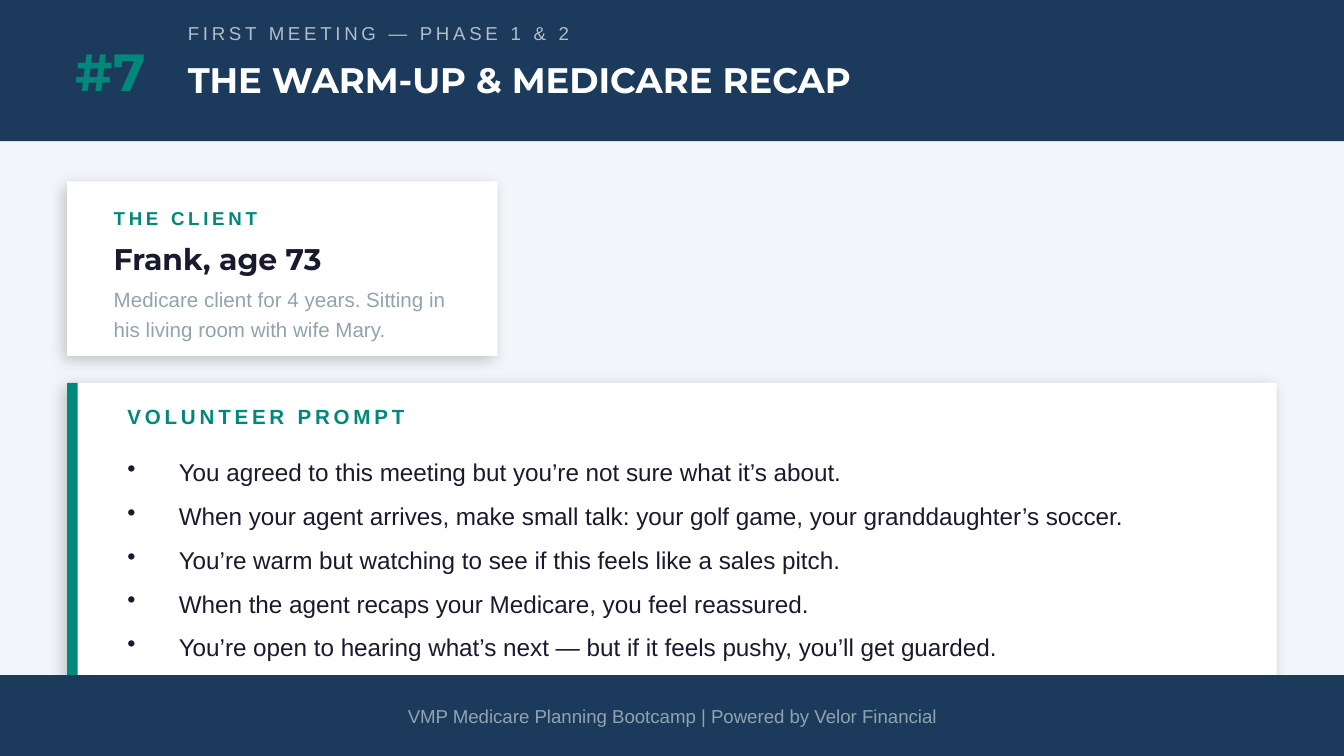
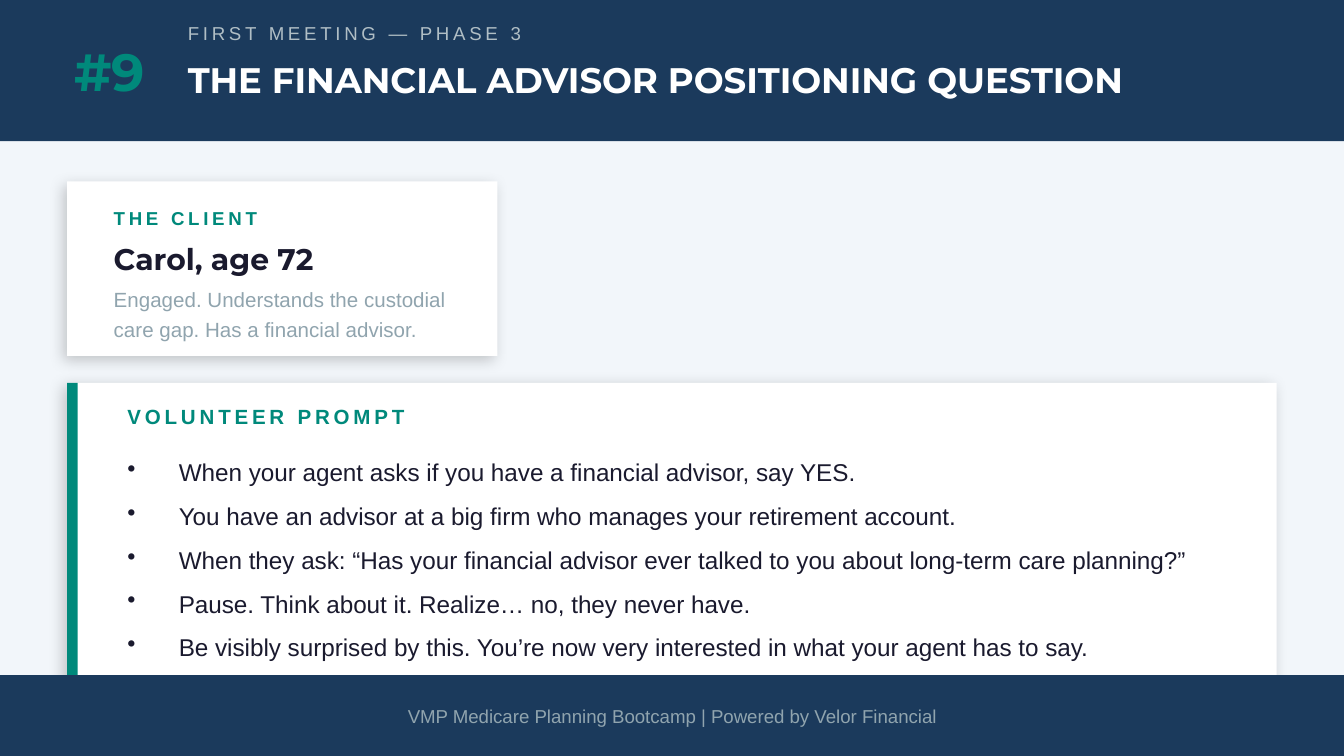
"""Builds two role-play slides for a Medicare planning bootcamp."""
import pptx
import pptx.dml.color
import pptx.enum.shapes
import pptx.enum.text
import pptx.oxml.ns
import pptx.util
from lxml import etree
from pptx.util import Cm

COLORS = {
    "page": "F2F6FA",
    "navy": "1B3A5C",
    "teal": "00897B",
    "white": "FFFFFF",
    "ink": "1A1A2E",
    "pale": "B0BEC5",
    "muted": "90A4AE",
}
HEADING_FONT, BODY_FONT = "Montserrat", "Arial"
WIDTH, HEIGHT = 25.4, 14.29
MARGIN = 1.27
CONTENT_WIDTH = WIDTH - 2 * MARGIN
MIDDLE = pptx.enum.text.MSO_ANCHOR.MIDDLE
TOP = pptx.enum.text.MSO_ANCHOR.TOP
CENTER = pptx.enum.text.PP_ALIGN.CENTER
LEFT = pptx.enum.text.PP_ALIGN.LEFT
FOOTER = "VMP Medicare Planning Bootcamp | Powered by Velor Financial"

SCENARIOS = [
    {
        "number": "#7",
        "number_left": 1.14,
        "phase": "FIRST MEETING — PHASE 1 & 2",
        "title": "THE WARM-UP & MEDICARE RECAP",
        "client": "Frank, age 73",
        "background": "Medicare client for 4 years. Sitting in his living room with wife Mary.",
        "prompts": [
            "You agreed to this meeting but you’re not sure what it’s about.",
            "When your agent arrives, make small talk: your golf game, your granddaughter’s soccer.",
            "You’re warm but watching to see if this feels like a sales pitch.",
            "When the agent recaps your Medicare, you feel reassured.",
            "You’re open to hearing what’s next — but if it feels pushy, you’ll get guarded.",
        ],
    },
    {
        "number": "#9",
        "number_left": 1.09,
        "phase": "FIRST MEETING — PHASE 3",
        "title": "THE FINANCIAL ADVISOR POSITIONING QUESTION",
        "client": "Carol, age 72",
        "background": "Engaged. Understands the custodial care gap. Has a financial advisor.",
        "prompts": [
            "When your agent asks if you have a financial advisor, say YES.",
            "You have an advisor at a big firm who manages your retirement account.",
            "When they ask: “Has your financial advisor ever talked to you about long-term care planning?”",
            "Pause. Think about it. Realize… no, they never have.",
            "Be visibly surprised by this. You’re now very interested in what your agent has to say.",
        ],
    },
]


def rgb(name):
    return pptx.dml.color.RGBColor.from_string(COLORS[name])


def add_xml(parent, tag, **attributes):
    return etree.SubElement(parent, pptx.oxml.ns.qn(tag), attributes)


class Deck:
    def __init__(self):
        self.presentation = pptx.Presentation()
        self.presentation.slide_width = Cm(WIDTH)
        self.presentation.slide_height = Cm(HEIGHT)
        self.slide = None

    def start_slide(self):
        self.slide = self.presentation.slides.add_slide(self.presentation.slide_layouts[6])
        self.slide.background.fill.solid()
        self.slide.background.fill.fore_color.rgb = rgb("page")

    def block(self, left, top, width, height, color):
        panel = self.slide.shapes.add_shape(
            pptx.enum.shapes.MSO_SHAPE.RECTANGLE, Cm(left), Cm(top), Cm(width), Cm(height))
        panel.shadow.inherit = False
        panel.fill.solid()
        panel.fill.fore_color.rgb = rgb(color)
        panel.line.fill.background()
        return panel

    def card(self, left, top, width, height):
        panel = self.block(left, top, width, height, "white")
        effects = panel._element.spPr.find(pptx.oxml.ns.qn("a:effectLst"))
        shadow = add_xml(effects, "a:outerShdw", blurRad=str(pptx.util.Pt(8)),
                         dist=str(pptx.util.Pt(3)), dir=str(135 * 60000),
                         algn="bl", rotWithShape="0")
        add_xml(add_xml(shadow, "a:srgbClr", val="000000"), "a:alpha", val="20000")

    def add_text(self, text, left, top, width, height, *, size, color, font=BODY_FONT,
                 bold=False, tracking=0, align=LEFT, anchor=MIDDLE, line_spacing=None,
                 space_after=None, bullet_indent=None):
        lines = [text] if isinstance(text, str) else text
        frame = self.slide.shapes.add_textbox(
            Cm(left), Cm(top), Cm(width), Cm(height)).text_frame
        frame.word_wrap = True
        frame.vertical_anchor = anchor
        for index, line in enumerate(lines):
            paragraph = frame.add_paragraph() if index else frame.paragraphs[0]
            paragraph.alignment = align
            if line_spacing:
                paragraph.line_spacing = line_spacing
            if space_after:
                paragraph.space_after = pptx.util.Pt(space_after)
            if bullet_indent:
                properties = paragraph._p.get_or_add_pPr()
                properties.set("marL", str(Cm(bullet_indent)))
                properties.set("indent", str(-Cm(bullet_indent)))
                add_xml(properties, "a:buSzPct", val="100000")
                add_xml(properties, "a:buChar", char="•")
            run = paragraph.add_run()
            run.text = line
            run.font.size = pptx.util.Pt(size)
            run.font.name = font
            run.font.bold = bold
            run.font.color.rgb = rgb(color)
            if tracking:
                run._r.get_or_add_rPr().set("spc", str(tracking * 100))

    def header(self, scenario):
        self.block(0, 0, WIDTH, 2.67, "navy")
        left = scenario["number_left"]
        self.add_text(scenario["number"], left, 0.25, 3.05 - left, 2.16, size=28,
                      color="teal", font=HEADING_FONT, bold=True, align=CENTER)
        self.add_text(scenario["phase"], 3.3, 0.25, 12.7, 0.76, size=10,
                      color="pale", tracking=2)
        self.add_text(scenario["title"], 3.3, 0.97, 20.83, 1.52, size=19,
                      color="white", font=HEADING_FONT, bold=True, anchor=TOP)

    def client_card(self, scenario):
        left, width = 1.9, 6.86
        self.card(MARGIN, 3.43, 8.13, 3.3)
        self.add_text("THE CLIENT", left, 3.68, width, 0.89, size=10,
                      color="teal", bold=True, tracking=2)
        self.add_text(scenario["client"], left, 4.45, width, 0.89, size=16,
                      color="ink", font=HEADING_FONT, bold=True)
        self.add_text(scenario["background"], left, 5.33, width, 1.14, size=11,
                      color="muted", line_spacing=1.2)

    def prompt_card(self, scenario):
        left, top, height = 2.16, 7.24, 6.1
        self.card(MARGIN, top, CONTENT_WIDTH, height)
        self.block(MARGIN, top, 0.2, height, "teal")
        self.add_text("VOLUNTEER PROMPT", left, 7.49, 10.16, 0.76, size=11,
                      color="teal", bold=True, tracking=2)
        self.add_text(scenario["prompts"], left, 8.38, 21.08, 4.57, size=13, color="ink",
                      anchor=TOP, line_spacing=1.25, space_after=4, bullet_indent=0.97)

    def footer(self):
        self.block(0, 12.76, WIDTH, 1.53, "navy")
        self.add_text(FOOTER, MARGIN, 12.83, CONTENT_WIDTH, 1.4, size=10,
                      color="muted", align=CENTER)


def main():
    deck = Deck()
    for scenario in SCENARIOS:
        deck.start_slide()
        deck.header(scenario)
        deck.client_card(scenario)
        deck.prompt_card(scenario)
        deck.footer()
    deck.presentation.save("out.pptx")


if __name__ == "__main__":
    main()
